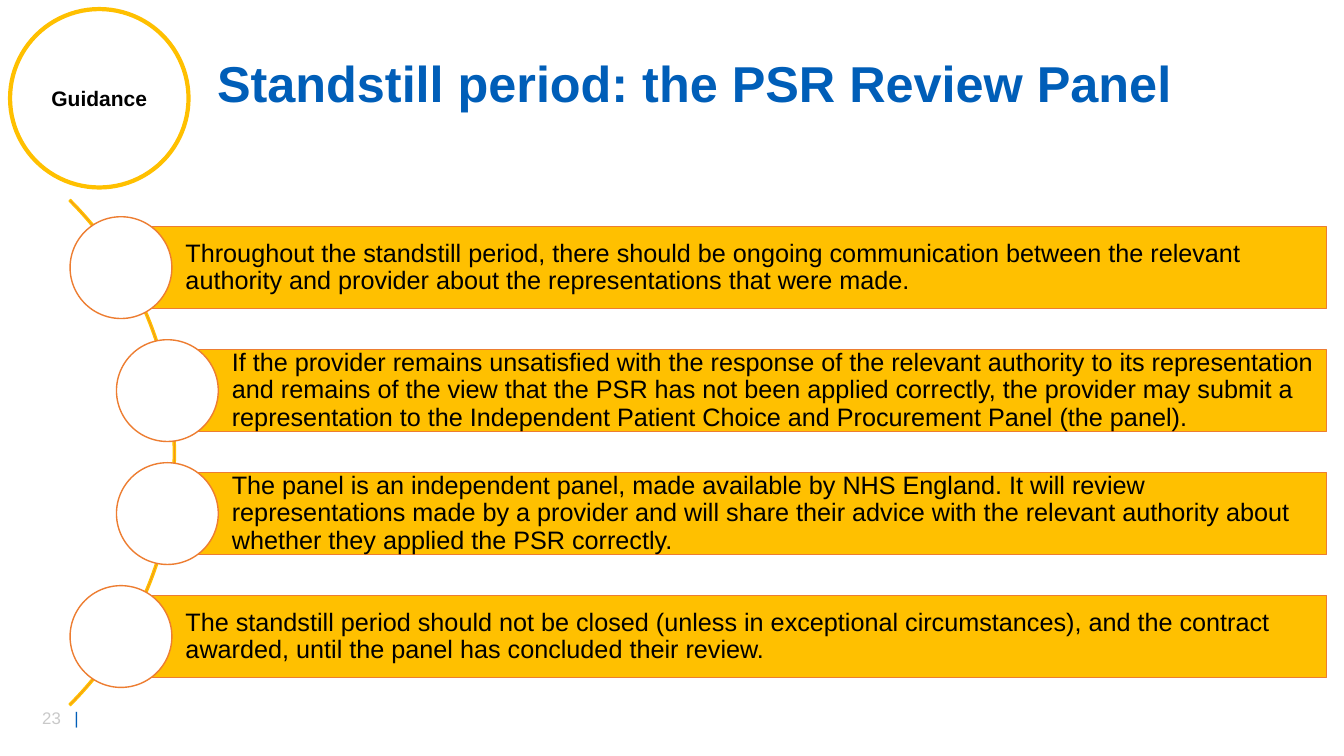
from lxml.etree import SubElement
from pptx import Presentation
from pptx.dml.color import RGBColor
from pptx.enum.shapes import MSO_SHAPE
from pptx.enum.text import MSO_ANCHOR, PP_ALIGN
from pptx.oxml.ns import qn
from pptx.util import Inches, Pt

AMBER, ORANGE, WHITE, BLACK = "FFC000", "ED7D31", "FFFFFF", "000000"
BLUE, GREY = "005EB8", "C9C9C9"

BAR_RIGHT = 13.16
BAR_HEIGHT = 0.81
FIRST_BAR_TOP = 2.25
BAR_PITCH = 1.22
MARKER_SIZE = 1.01

# Left edge of each bar and its wording
STEPS = [
    (1.2, "Throughout the standstill period, there should be ongoing communication between "
          "the relevant authority and provider about the representations that were made."),
    (1.66, "If the provider remains unsatisfied with the response of the relevant authority to "
           "its representation and remains of the view that the PSR has not been applied "
           "correctly, the provider may submit a representation to the Independent Patient "
           "Choice and Procurement Panel (the panel)."),
    (1.66, "The panel is an independent panel, made available by NHS England. It will review "
           "representations made by a provider and will share their advice with the relevant "
           "authority about whether they applied the PSR correctly."),
    (1.2, "The standstill period should not be closed (unless in exceptional circumstances), "
          "and the contract awarded, until the panel has concluded their review."),
]


def color(value):
    return RGBColor.from_string(value)


def format_font(font, size, hex_color, bold=False):
    font.name = "Arial"
    font.size = Pt(size)
    font.bold = bold
    font.color.rgb = color(hex_color)


def add_filled_shape(slide, kind, left, top, width, height, fill, line, line_width=1):
    shape = slide.shapes.add_shape(kind, Inches(left), Inches(top), Inches(width), Inches(height))
    shape.shadow.inherit = False
    shape.fill.solid()
    shape.fill.fore_color.rgb = color(fill)
    shape.line.color.rgb = color(line)
    shape.line.width = Pt(line_width)
    return shape


def write_text(shape, text, size, hex_color, alignment, bold=False, line_spacing=1.0):
    text_frame = shape.text_frame
    text_frame.word_wrap = True
    text_frame.vertical_anchor = MSO_ANCHOR.MIDDLE
    text_frame.text = text
    paragraph = text_frame.paragraphs[0]
    paragraph.alignment = alignment
    paragraph.line_spacing = line_spacing
    format_font(paragraph.runs[0].font, size, hex_color, bold)


def add_title(slide, text):
    box = slide.shapes.add_textbox(Inches(1.95), Inches(0.38), Inches(9.88), Inches(0.95))
    write_text(box, text, 36, BLUE, PP_ALIGN.CENTER, bold=True, line_spacing=0.9)


def add_badge(slide, text):
    badge = add_filled_shape(slide, MSO_SHAPE.OVAL, 0.1, 0.09, 1.77, 1.77, WHITE, AMBER, 3)
    badge.text_frame.margin_left = badge.text_frame.margin_right = 0
    write_text(badge, text, 15, BLACK, PP_ALIGN.CENTER, bold=True)


def add_arc(slide):
    """Thin arc from 315 to 45 degrees that links the step markers."""
    arc = add_filled_shape(slide, MSO_SHAPE.BLOCK_ARC, -5.36, 0.94, 7.1, 7.1, ORANGE, AMBER)
    for index, value in enumerate((189, 27, 0.003)):
        arc.adjustments[index] = value


def add_step(slide, left, top, text):
    """Bar with its wording, and a round marker centred on the bar's left end."""
    bar = add_filled_shape(slide, MSO_SHAPE.RECTANGLE, left, top, BAR_RIGHT - left, BAR_HEIGHT,
                           AMBER, ORANGE)
    text_frame = bar.text_frame
    text_frame.margin_left = Inches(0.64)
    text_frame.margin_right = text_frame.margin_top = text_frame.margin_bottom = Inches(0.05)
    write_text(bar, text, 18, BLACK, PP_ALIGN.LEFT, line_spacing=0.9)
    add_filled_shape(slide, MSO_SHAPE.OVAL, left - MARKER_SIZE / 2,
                     top + (BAR_HEIGHT - MARKER_SIZE) / 2, MARKER_SIZE, MARKER_SIZE,
                     WHITE, ORANGE)


def add_page_number(slide, number):
    box = slide.shapes.add_textbox(Inches(0.32), Inches(6.97), Inches(0.71), Inches(0.3))
    box.text_frame.word_wrap = True
    paragraph = box.text_frame.paragraphs[0]
    tabs = SubElement(paragraph._p.get_or_add_pPr(), qn("a:tabLst"))
    SubElement(tabs, qn("a:tab"), pos=str(Inches(0.32)), algn="l")
    for text, hex_color in ((f"{number}\t", GREY), ("|", BLUE)):
        run = paragraph.add_run()
        run.text = text
        format_font(run.font, 12, hex_color)


def main():
    presentation = Presentation()
    presentation.slide_width = Inches(13.33)
    presentation.slide_height = Inches(7.5)
    slide = presentation.slides.add_slide(presentation.slide_layouts[6])

    add_page_number(slide, 23)
    add_title(slide, "Standstill period: the PSR Review Panel")
    add_badge(slide, "Guidance")
    add_arc(slide)
    for index, (left, text) in enumerate(STEPS):
        add_step(slide, left, FIRST_BAR_TOP + index * BAR_PITCH, text)

    presentation.save("out.pptx")


if __name__ == "__main__":
    main()
